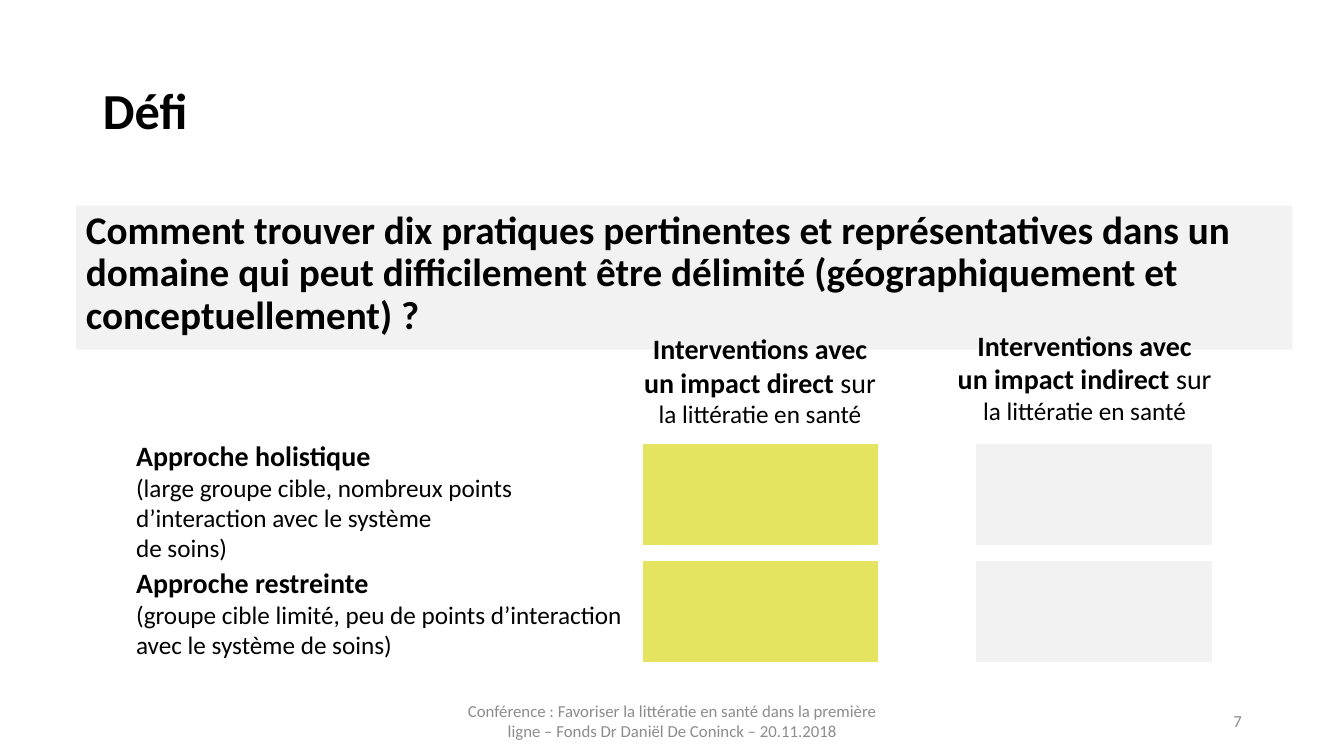
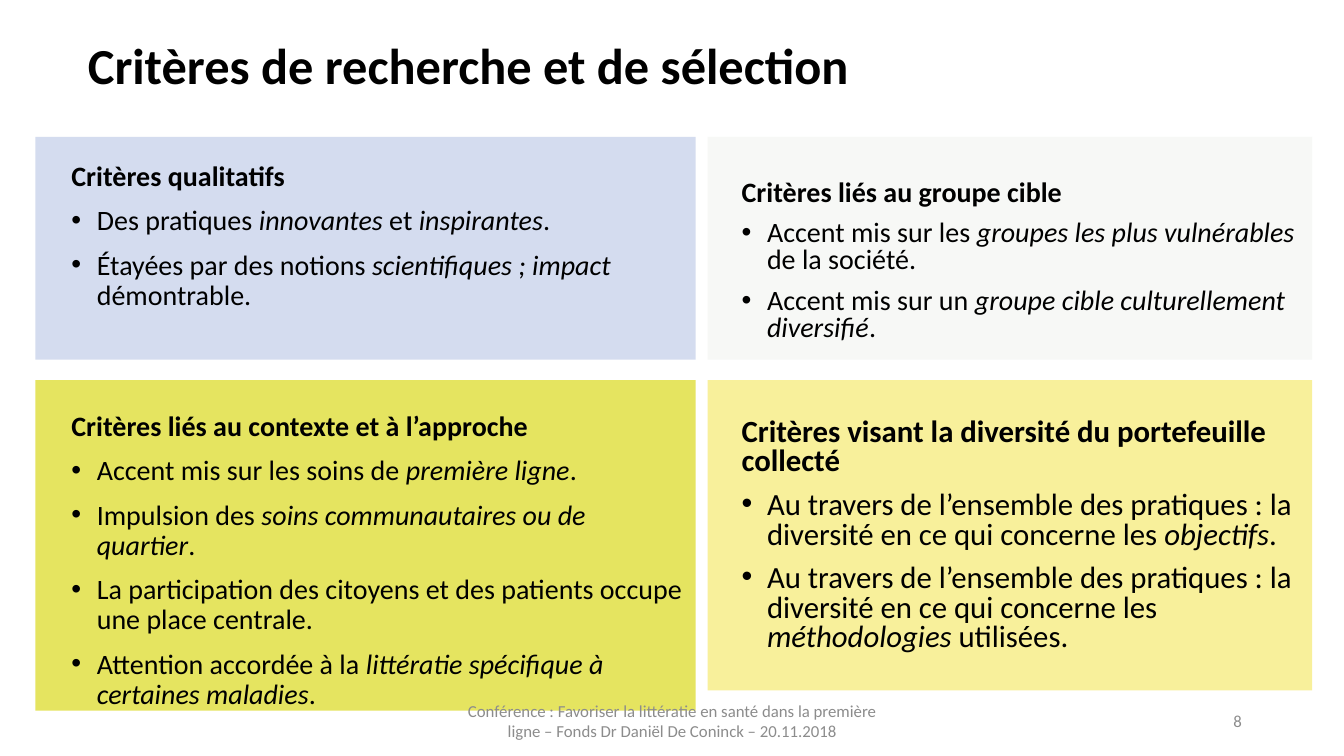
"""Build two slides on the challenge and the selection criteria of a health literacy study."""
import copy

import pptx
import pptx.dml.color
import pptx.enum.shapes
import pptx.enum.text
import pptx.oxml.ns
import pptx.util
from lxml import etree

Cm = pptx.util.Cm
Pt = pptx.util.Pt
Align = pptx.enum.text.PP_ALIGN
Anchor = pptx.enum.text.MSO_ANCHOR
AutoSize = pptx.enum.text.MSO_AUTO_SIZE
Placeholder = pptx.enum.shapes.PP_PLACEHOLDER

FONT = "Calibri"
BLACK, WHITE, GREY = "000000", "FFFFFF", "8C8C8C"
LIME, PALE_GREY = "E5E460", "F2F2F2"
BLUE, OFF_WHITE, YELLOW = "D4DCEF", "F7F8F6", "F8F09B"
FOOTER = ("Conférence : Favoriser la littératie en santé dans la première ligne"
          " – Fonds Dr Daniël De Coninck – 20.11.2018")


def paint(color_format, value):
    color_format.rgb = pptx.dml.color.RGBColor.from_string(value)


def write(frame, runs, size, color=BLACK, alignment=Align.LEFT, spacing=1.0, before=0, bullet=False):
    first = not frame.paragraphs[0].runs
    paragraph = frame.paragraphs[0] if first else frame.add_paragraph()
    indent = Cm(0.64) if bullet else 0
    properties = paragraph._p.get_or_add_pPr()
    properties.set("marL", str(indent))
    properties.set("indent", str(-indent))
    if bullet:
        font = etree.SubElement(properties, pptx.oxml.ns.qn("a:buFont"))
        font.set("typeface", "Arial")
        etree.SubElement(properties, pptx.oxml.ns.qn("a:buChar")).set("char", "•")
    else:
        etree.SubElement(properties, pptx.oxml.ns.qn("a:buNone"))
    paragraph.alignment = alignment
    paragraph.line_spacing = spacing
    paragraph.space_before = Pt(0 if first else before)
    paragraph.space_after = Pt(0)
    for text, style in runs:
        run = paragraph.add_run()
        run.text = text
        run.font.name = FONT
        run.font.size = Pt(size)
        run.font.bold = style == "b"
        run.font.italic = style == "i"
        paint(run.font.color, color)


presentation = pptx.Presentation()
presentation.slide_width, presentation.slide_height = Cm(33.87), Cm(19.05)
content_layout = presentation.slide_layouts[1]
comparison_layout = presentation.slide_layouts[4]

pages = [
    (content_layout, "Défi", "7", (2.34, 1.02, 29.21, 3.68)),
    (comparison_layout, "Critères de recherche et de sélection", "8", (1.96, 0.25, 29.21, 2.92)),
]
slides = []
for layout, title, number, title_box in pages:
    slide = presentation.slides.add_slide(layout)
    slides.append(slide)
    shape = slide.shapes.title
    shape.left, shape.top, shape.width, shape.height = map(Cm, title_box)
    shape.text_frame.auto_size = AutoSize.NONE
    shape.text_frame.vertical_anchor = Anchor.MIDDLE
    write(shape.text_frame, [(title, "b")], 36, spacing=0.9)

challenge, criteria = slides

question = challenge.placeholders[1]
question.left, question.top, question.width, question.height = map(Cm, (1.91, 5.18, 30.66, 3.63))
question.fill.solid()
paint(question.fill.fore_color, PALE_GREY)
question.text_frame.auto_size = AutoSize.NONE
write(question.text_frame, [(
    "Comment trouver dix pratiques pertinentes et représentatives dans un domaine qui peut "
    "difficilement être délimité (géographiquement et conceptuellement) ?", "b")], 28, spacing=0.9)

labels = [
    ((3.18, 10.92, 10.26, 3.43), Align.LEFT, [
        (20, [("Approche holistique", "b")]),
        (18, [("(large groupe cible, nombreux points", "")]),
        (18, [("d’interaction avec le système", "")]),
        (18, [("de soins)", "")]),
    ]),
    ((3.18, 14.12, 13.06, 2.64), Align.LEFT, [
        (20, [("Approche restreinte", "b")]),
        (18, [("(groupe cible limité, peu de points d’interaction", "")]),
        (18, [("avec le système de soins)", "")]),
    ]),
    ((15.98, 8.23, 6.35, 2.72), Align.CENTER, [
        (20, [("Interventions avec", "b")]),
        (20, [("un impact direct", "b"), (" sur", "")]),
        (18, [("la littératie en santé", "")]),
    ]),
    ((23.88, 8.15, 6.91, 2.72), Align.CENTER, [
        (20, [("Interventions avec", "b")]),
        (20, [("un impact indirect ", "b"), ("sur", "")]),
        (18, [("la littératie en santé", "")]),
    ]),
]
for box, alignment, lines in labels:
    label = challenge.shapes.add_textbox(*map(Cm, box))
    label.text_frame.word_wrap = False
    label.text_frame.auto_size = AutoSize.SHAPE_TO_FIT_TEXT
    for size, runs in lines:
        write(label.text_frame, runs, size, alignment=alignment)

for left, color in ((16.18, LIME), (24.59, PALE_GREY)):
    for top in (11.18, 14.12):
        cell = challenge.shapes.add_shape(
            pptx.enum.shapes.MSO_SHAPE.RECTANGLE, Cm(left), Cm(top), Cm(5.97), Cm(2.57))
        cell.shadow.inherit = False
        cell.fill.solid()
        paint(cell.fill.fore_color, color)
        paint(cell.line.color, WHITE)
        cell.line.width = Pt(1)

diversity = "Au travers de l’ensemble des pratiques : la diversité en ce qui concerne les "
panels = [
    (1, (0.89, 3.45, 16.64, 5.61), BLUE, (0.91, 0.64), 20, 0.9, "Critères qualitatifs", [
        [("Des pratiques ", ""), ("innovantes ", "i"), ("et ", ""), ("inspirantes", "i"), (".", "")],
        [("Étayées par des notions ", ""), ("scientifiques ; impact", "i"), (" démontrable.", "")],
    ]),
    (2, (0.89, 9.58, 16.64, 8.33), LIME, (0.91, 0.81), 20, 0.9,
     "Critères liés au contexte et à l’approche", [
        [("Accent mis sur les soins de ", ""), ("première ligne", "i"), (".", "")],
        [("Impulsion des ", ""), ("soins communautaires ou de quartier", "i"), (".", "")],
        [("La participation des citoyens et des patients occupe une place centrale.", "")],
        [("Attention accordée à la ", ""), ("littératie spécifique à certaines maladies", "i"), (".", "")],
    ]),
    (3, (17.83, 3.45, 15.24, 5.61), OFF_WHITE, (0.86, 1.1), 20, 0.8, "Critères liés au groupe cible", [
        [("Accent mis sur les ", ""), ("groupes les plus vulnérables ", "i"), ("de la société.", "")],
        [("Accent mis sur un ", ""), ("groupe cible culturellement diversifié", "i"), (".", "")],
    ]),
    (4, (17.83, 9.58, 15.24, 7.82), YELLOW, (0.86, 0.97), 22, 0.8,
     "Critères visant la diversité du portefeuille collecté", [
        [(diversity, ""), ("objectifs", "i"), (".", "")],
        [(diversity, ""), ("méthodologies", "i"), (" utilisées.", "")],
    ]),
]
for index, box, color, margins, size, spacing, heading, bullets in panels:
    panel = criteria.placeholders[index]
    panel.left, panel.top, panel.width, panel.height = map(Cm, box)
    panel.fill.solid()
    paint(panel.fill.fore_color, color)
    frame = panel.text_frame
    frame.auto_size = AutoSize.NONE
    frame.vertical_anchor = Anchor.TOP
    frame.margin_left, frame.margin_top = map(Cm, margins)
    frame.margin_right, frame.margin_bottom = Cm(0.23), Cm(0)
    write(frame, [(heading, "b")], size, spacing=spacing)
    for runs in bullets:
        write(frame, runs, size, spacing=spacing, before=10, bullet=True)

for slide, (layout, title, number, title_box) in zip(slides, pages):
    footers = {
        Placeholder.FOOTER: (FOOTER, (11.23, 17.65, 11.43, 1.02), Align.CENTER),
        Placeholder.SLIDE_NUMBER: (number, (23.93, 17.65, 7.62, 1.02), Align.RIGHT),
    }
    for source in layout.placeholders:
        if source.placeholder_format.type in footers:
            text, box, alignment = footers[source.placeholder_format.type]
            slide.shapes._spTree.append(copy.deepcopy(source._element))
            footer = slide.shapes[-1]
            footer.left, footer.top, footer.width, footer.height = map(Cm, box)
            footer.text_frame.clear()
            footer.text_frame.auto_size = AutoSize.NONE
            footer.text_frame.vertical_anchor = Anchor.MIDDLE
            write(footer.text_frame, [(text, "")], 12, GREY, alignment)

presentation.save("out.pptx")
